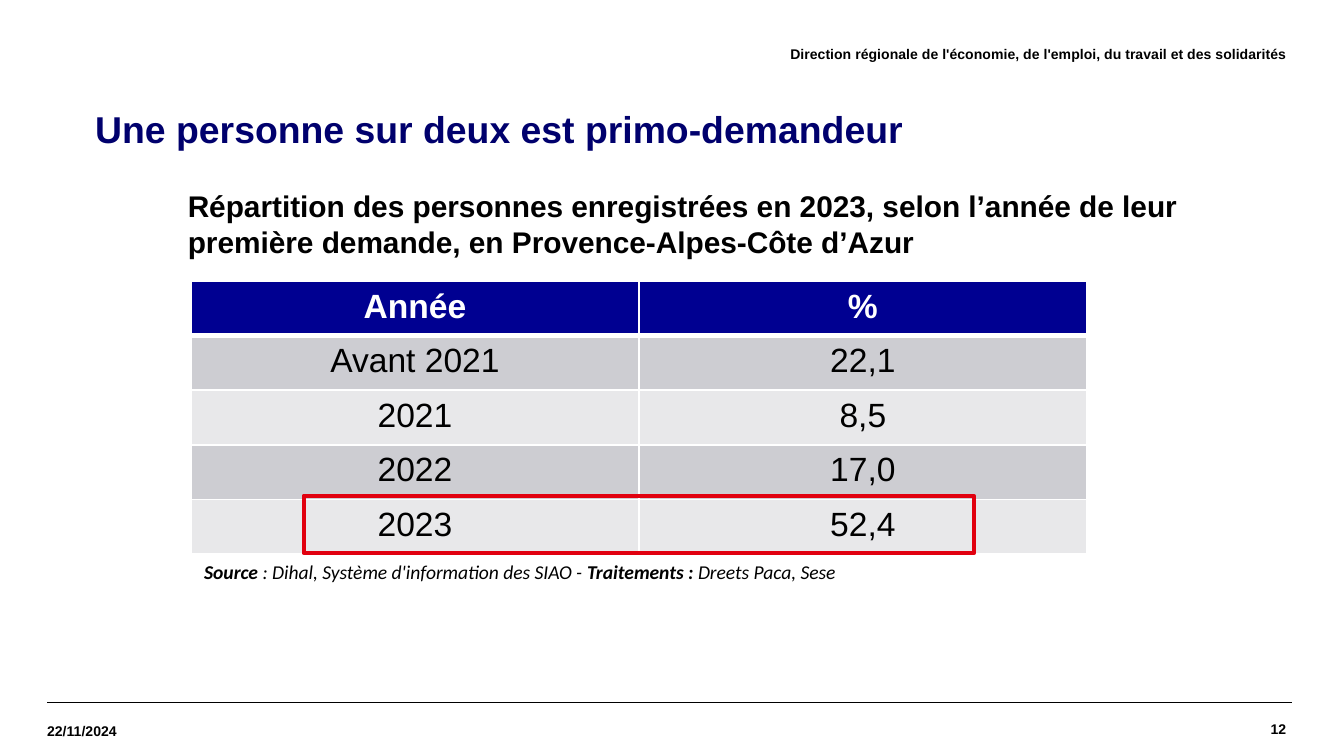
from lxml.etree import SubElement as Sub
from pptx import Presentation
from pptx.dml.color import RGBColor as Rgb
from pptx.enum.shapes import MSO_CONNECTOR as Conn, MSO_SHAPE as Geo
from pptx.enum.text import MSO_ANCHOR as Anchor, PP_ALIGN as Align
from pptx.oxml.ns import qn
from pptx.util import Cm, Pt

HUES = {
    "ink": "000000", "white": "FFFFFF", "title": "00006D", "head": "000091",
    "dark": "CDCDD2", "light": "E8E8EA", "red": "E1000F",
}
ROWS = [
    ("Année", "%"),
    ("Avant 2021", "22,1"),
    ("2021", "8,5"),
    ("2022", "17,0"),
    ("2023", "52,4"),
]
SOURCE = [
    ("Source ", True),
    (": Dihal, Système d'information des SIAO - ", False),
    ("Traitements : ", True),
    ("Dreets Paca, Sese", False),
]


class Page:
    def __init__(self, slide, face="Arial"):
        self.slide = slide
        self.face = face

    def hue(self, name):
        return Rgb.from_string(HUES[name])

    def style(self, run, size, hue="ink", bold=True, italic=False, face=None):
        font = run.font
        font.name = face or self.face
        font.size = Pt(size)
        font.bold = bold
        font.italic = italic
        font.color.rgb = self.hue(hue)

    def box(self, area, anchor=Anchor.TOP, flush=False):
        """Add an empty text box; flush removes its insets."""
        frame = self.slide.shapes.add_textbox(*map(Cm, area)).text_frame
        frame.word_wrap = True
        frame.vertical_anchor = anchor
        if flush:
            frame.margin_left = frame.margin_right = 0
            frame.margin_top = frame.margin_bottom = 0
        return frame

    def text(self, words, area, size, hue="ink", align=Align.LEFT, **opts):
        frame = self.box(area, **opts)
        frame.text = words
        para = frame.paragraphs[0]
        para.alignment = align
        self.style(para.runs[0], size, hue)
        return frame

    def label(self, words, area, align=Align.LEFT):
        """Add a small header or footer text."""
        self.text(words, area, 7.5, align=align, anchor=Anchor.MIDDLE, flush=True)

    def mixed(self, parts, area, size, face):
        """Add an italic line whose parts are bold or not."""
        para = self.box(area).paragraphs[0]
        for words, bold in parts:
            run = para.add_run()
            run.text = words
            self.style(run, size, bold=bold, italic=True, face=face)

    def rule(self, left, right, y):
        line = self.slide.shapes.add_connector(
            Conn.STRAIGHT, Cm(left), Cm(y), Cm(right), Cm(y))
        line.line.color.rgb = self.hue("ink")
        line.line.width = Pt(0.8)
        Sub(line._element.spPr, qn("a:effectLst"))

    def frame(self, area, hue, width):
        rect = self.slide.shapes.add_shape(Geo.RECTANGLE, *map(Cm, area))
        rect.shadow.inherit = False
        rect.fill.background()
        rect.line.color.rgb = self.hue(hue)
        rect.line.width = Pt(width)

    def edges(self, cell, top, bottom):
        """Draw white cell borders; the sides are 1 pt wide."""
        props = cell._tc.get_or_add_tcPr()
        for side, width in zip("LRTB", (1, 1, top, bottom)):
            edge = Sub(props, qn(f"a:ln{side}"), w=str(Pt(width)))
            fill = Sub(edge, qn("a:solidFill"))
            Sub(fill, qn("a:srgbClr"), val=HUES["white"])

    def table(self, rows, area, size):
        grid = self.slide.shapes.add_table(
            len(rows), len(rows[0]), *map(Cm, area)).table
        for r, row in enumerate(rows):
            head = r == 0
            back = "head" if head else "dark" if r % 2 else "light"
            for c, words in enumerate(row):
                cell = grid.cell(r, c)
                self.edges(cell, 3 if r == 1 else 1, 3 if head else 1)
                cell.fill.solid()
                cell.fill.fore_color.rgb = self.hue(back)
                cell.text = words
                para = cell.text_frame.paragraphs[0]
                para.alignment = Align.CENTER
                self.style(para.runs[0], size, "white" if head else "ink", head)


def main():
    deck = Presentation()
    deck.slide_width, deck.slide_height = Cm(25.4), Cm(14.29)
    page = Page(deck.slides.add_slide(deck.slide_layouts[6]))

    for left in (0.89, 0.99):
        page.rule(left, left + 23.42, 13.28)
    page.label("12", (20.55, 13.28, 3.76, 0.99), Align.RIGHT)
    page.label("22/11/2024", (0.89, 13.34, 3.35, 0.97))
    page.label("Direction régionale de l'économie, de l'emploi, du travail"
               " et des solidarités", (7.98, 0.53, 16.33, 0.99), Align.RIGHT)

    title = page.text("Une personne sur deux est primo-demandeur",
                      (1.5, 1.73, 23.39, 1.5), 20, "title", anchor=Anchor.MIDDLE)
    title.margin_left = Cm(0.3)
    title.paragraphs[0].line_spacing = 0.9

    page.table(ROWS, (3.61, 5.31, 16.93, 5.16), 18)
    page.mixed(SOURCE, (3.61, 10.46, 20.6, 0.74), 10.5, "Calibri")
    page.frame((5.74, 9.37, 12.67, 1.09), "red", 2)
    page.text("Répartition des personnes enregistrées en 2023, selon l’année de"
              " leur première demande, en Provence-Alpes-Côte d’Azur",
              (3.3, 3.43, 19.41, 1.63), 16)

    deck.save("out.pptx")


if __name__ == "__main__":
    main()
